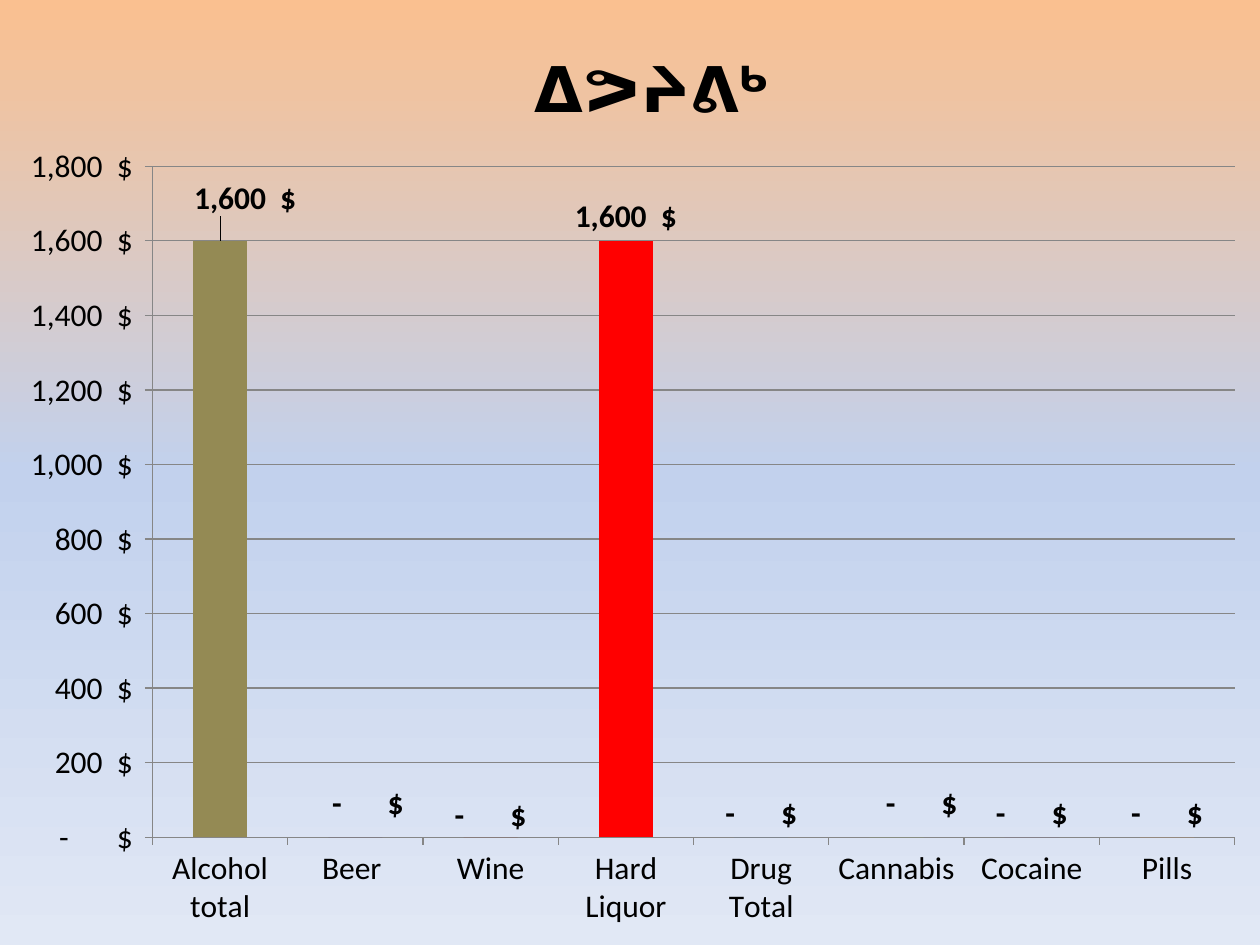
import pptx
import pptx.chart.data
import pptx.dml.color
import pptx.enum.chart
import pptx.oxml
import pptx.oxml.ns
import pptx.util
from lxml import etree

Pt = pptx.util.Pt
RGB = pptx.dml.color.RGBColor.from_string
qn = pptx.oxml.ns.qn

COLORS = {
    "text": "000000", "line": "868686", "bars": "4F81BD",
    "sky top": "FAC090", "sky middle": "C2D1ED", "sky bottom": "E1E8F5",
}
DOLLARS = r'_ * #,##0_)\ "$"_ ;_ * \(#,##0\)\ "$"_ ;_ * "-"??_)\ "$"_ ;_ @_ '
SPENDING = {  # category: (amount, bar colour)
    "Alcohol total": (1600, "948A54"),
    "Beer ": (0, "604A7B"),
    "Wine": (0, "953735"),
    "Hard Liquor": (1600, "FF0000"),
    "Drug Total": (0, COLORS["bars"]),
    "Cannabis": (0, "9BBB59"),
    "Cocaine": (0, "8064A2"),
    "Pills": (0, "F79646"),
}
LABEL_SHIFTS = {0: (0.02, -0.02), 1: (0.01, -0.01), 2: (0, 0.002), 5: (0.02, -0.01)}


def manual_layout(**values):
    """Return a c:layout element; values are fractions of the chart."""
    layout = etree.Element(qn("c:layout"))
    manual = etree.SubElement(layout, qn("c:manualLayout"))
    for tag, value in values.items():
        etree.SubElement(manual, qn(f"c:{tag}")).set("val", str(value))
    return layout


def style_font(font, size, bold=False):
    for name, value in {"name": "Calibri", "size": Pt(size), "bold": bold}.items():
        setattr(font, name, value)
    font.color.rgb = RGB(COLORS["text"])


prs = pptx.Presentation()
prs.slide_width, prs.slide_height = Pt(720), Pt(540)
slide = prs.slides.add_slide(prs.slide_layouts[6])

# Background: three stops from top to bottom
sky = slide.background.fill
sky.gradient()
sky.gradient_angle = 270
stops = slide.background._cSld.find(".//" + qn("a:gsLst"))
for stop in list(stops):
    stops.remove(stop)
for position, name in ((0, "sky top"), (50, "sky middle"), (100, "sky bottom")):
    stop = etree.SubElement(stops, qn("a:gs"), pos=str(position * 1000))
    etree.SubElement(stop, qn("a:srgbClr"), val=COLORS[name])

# Chart
spending = pptx.chart.data.CategoryChartData(number_format=DOLLARS)
spending.categories = list(SPENDING)
spending.add_series("Series 1", [amount for amount, _ in SPENDING.values()])
chart = slide.shapes.add_chart(
    pptx.enum.chart.XL_CHART_TYPE.COLUMN_CLUSTERED, 0, 0, Pt(720), Pt(540), spending
).chart
chart.has_legend = False
style_font(chart.font, 18)

chart.has_title = True
heading = chart.chart_title.text_frame.paragraphs[0].add_run()
heading.text = "ᐃᕗᔨᕕᒃ"
style_font(heading.font, 36, bold=True)
title = chart.chart_title._element
for old in title.findall(qn("c:layout")):
    title.remove(old)
title.find(qn("c:tx")).addnext(
    manual_layout(xMode="edge", yMode="edge", x=0.415, y=0.035))

plot_area = chart._chartSpace.chart.plotArea
for old in plot_area.findall(qn("c:layout")):
    plot_area.remove(old)
plot_area.insert(0, manual_layout(
    layoutTarget="inner", xMode="edge", yMode="edge", x=0.121, y=0.176, w=0.859, h=0.71))

# Axes
amounts = chart.value_axis
scale = {"minimum_scale": 0, "maximum_scale": 1800, "major_unit": 200,
         "has_major_gridlines": True}
for name, value in scale.items():
    setattr(amounts, name, value)
amounts.tick_labels.number_format = DOLLARS
amounts.tick_labels.number_format_is_linked = False
for axis in (amounts, chart.category_axis):
    axis.major_tick_mark = pptx.enum.chart.XL_TICK_MARK.OUTSIDE
    style_font(axis.tick_labels.font, 18)
for part in (amounts, chart.category_axis, amounts.major_gridlines):
    part.format.line.color.rgb = RGB(COLORS["line"])
    part.format.line.width = Pt(0.75)

# Bars and their labels
plot = chart.plots[0]
plot.gap_width = 150
plot.vary_by_categories = False
bars = plot.series[0]
bars.format.fill.solid()
bars.format.fill.fore_color.rgb = RGB(COLORS["bars"])
for index, (_, color) in enumerate(SPENDING.values()):
    fill = bars.points[index].format.fill
    fill.solid()
    fill.fore_color.rgb = RGB(color)

outside = pptx.enum.chart.XL_LABEL_POSITION.OUTSIDE_END
labels = bars.data_labels
label_format = {"show_value": True, "number_format": DOLLARS,
                "number_format_is_linked": False, "position": outside}
for name, value in label_format.items():
    setattr(labels, name, value)
style_font(labels.font, 18, bold=True)
for index, (dx, dy) in LABEL_SHIFTS.items():
    label = bars.points[index].data_label
    label.position = outside
    style_font(label.font, 18, bold=True)
    element = labels._element.xpath(f'c:dLbl[c:idx/@val="{index}"]')[0]
    number_format = etree.Element(qn("c:numFmt"), formatCode=DOLLARS, sourceLinked="0")
    element.find(qn("c:idx")).addnext(number_format)
    number_format.addprevious(manual_layout(x=dx, y=dy))

prs.save("out.pptx")
